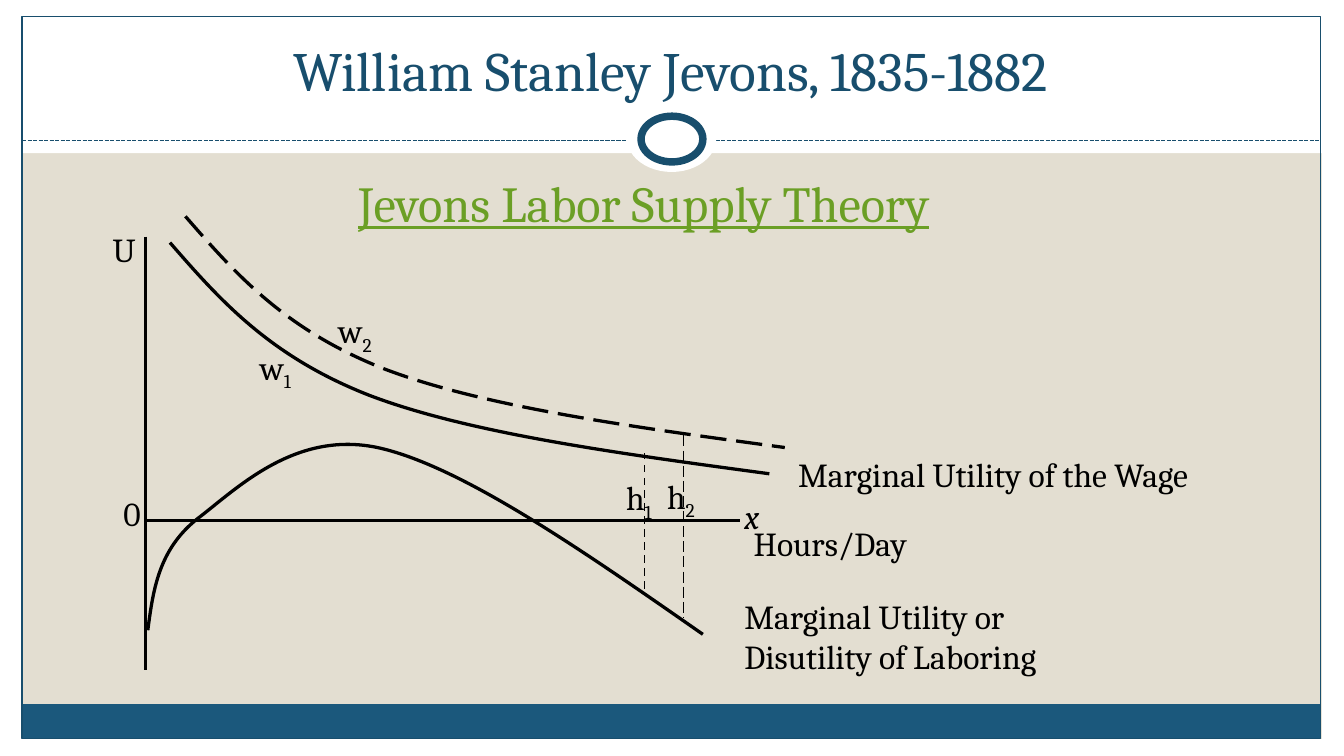
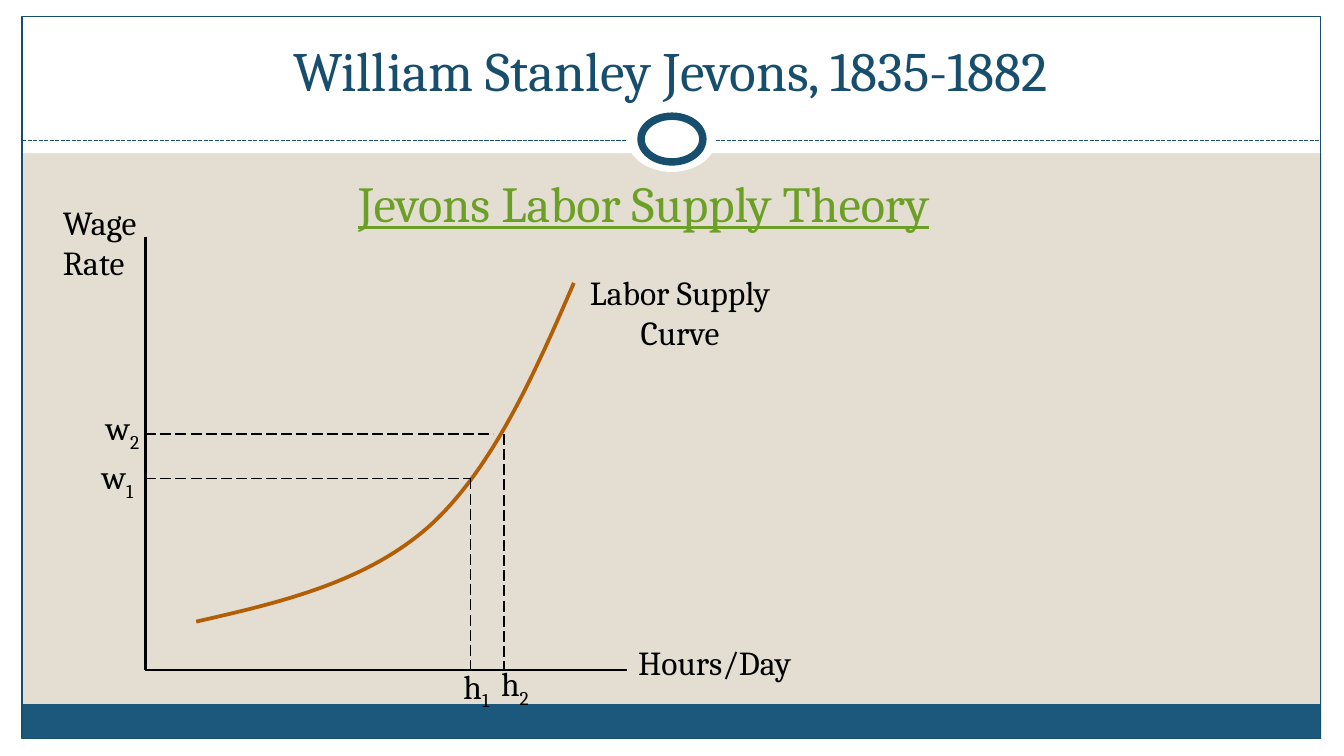
"""Build two slides on the Jevons theory of labor supply."""
from dataclasses import dataclass
from typing import Optional

import lxml.etree
import pptx
import pptx.dml.color
import pptx.enum.dml
import pptx.enum.shapes
import pptx.enum.text
import pptx.oxml.ns
import pptx.util

SCALE = 4572
W, H = 2000, 1125
FONT = "Cambria"
COLORS = {
    "sand": "E3DED1",
    "white": "FFFFFF",
    "band": "1B587C",
    "navy": "184E6D",
    "green": "6B9F25",
    "black": "000000",
    "supply": "B25E07",
}
DASH = pptx.enum.dml.MSO_LINE
KIND = pptx.enum.shapes.MSO_SHAPE
ALIGN = pptx.enum.text.PP_ALIGN
ANCHOR = pptx.enum.text.MSO_ANCHOR

AXIS_X, AXIS_TOP, AXIS_END = 216, 352, 997
H1, H2 = 700, 750
W1, W2 = 712, 646


@dataclass(frozen=True)
class Panel:
    """A preset shape of the slide frame."""
    x: int
    y: int
    w: int
    h: int
    fill: Optional[str] = "white"
    line: Optional[str] = None
    width: float = 0.75
    kind: KIND = KIND.RECTANGLE


@dataclass(frozen=True)
class Line:
    """A straight line."""
    x1: int
    y1: int
    x2: int
    y2: int
    width: float = 1.5
    dash: Optional[DASH] = None
    color: str = "black"


@dataclass(frozen=True)
class Curve:
    """A chain of cubic Bezier segments: a start, then three points each."""
    points: tuple[tuple[int, int], ...]
    width: float = 1.75
    dash: Optional[DASH] = None
    color: str = "black"


@dataclass(frozen=True)
class Label:
    """A text box, where an underscore starts a subscript."""
    text: str
    x: int
    y: int
    w: int
    h: int = 81
    size: float = 18
    color: str = "black"
    align: ALIGN = ALIGN.LEFT
    anchor: ANCHOR = ANCHOR.TOP
    wrap: bool = False
    italic: bool = False
    underline: bool = False


FRAME = (
    Panel(0, 1100, W, 25),
    Panel(0, 0, W, 228),
    Panel(0, 0, 33, H),
    Panel(1967, 0, 33, H),
    Panel(33, 1048, 1932, 51, "band"),
    Panel(33, 25, 1932, 1074, None, "navy"),
)
RULE = Line(33, 209, 1965, 209, 0.75, DASH.SQUARE_DOT, "navy")
RING = (
    Panel(933, 156, 133, 100, kind=KIND.OVAL),
    Panel(954, 173, 92, 68, "white", "navy", 4, KIND.OVAL),
)
HEADINGS = (
    Label("William Stanley Jevons, 1835-1882", 66, 38, 1866, 124, 29.7, "navy",
          ALIGN.CENTER, ANCHOR.BOTTOM, True),
    Label("Jevons Labor Supply Theory", 66, 246, 1784, 812, 27, "green",
          ALIGN.CENTER, wrap=True, underline=True),
)
UTILITY_AXIS = Line(AXIS_X, AXIS_TOP, AXIS_X, AXIS_END)

WAGE_UTILITY = ((253, 361), (327, 446), (401, 530), (549, 588),
                (698, 645), (922, 675), (1145, 705))
WAGE_SHIFT = (23, -39)
LABOR_UTILITY = ((220, 938), (228, 878), (236, 818), (294, 772), (352, 728),
                 (440, 638), (566, 667), (690, 696), (868, 820), (1046, 944))
SUPPLY = ((292, 925), (420, 896), (546, 866), (640, 782),
          (732, 698), (794, 560), (854, 421))

UTILITY_SLIDE = (
    Label("Marginal Utility or \nDisutility of Laboring", 1088, 877, 520, 143),
    Curve(LABOR_UTILITY),
    Line(AXIS_X, 775, 1101, 775),
    UTILITY_AXIS,
    Curve(WAGE_UTILITY),
    Line(959, 876, 959, 674, 1, DASH.DASH),
    Label("0", 164, 724, 72),
    Label("Hours/Day", 1102, 768, 292),
    Label("Marginal Utility of the Wage", 1168, 666, 676),
    Label("U", 148, 331, 78),
    Label("x", 1088, 728, 66, italic=True),
    Curve(tuple((x + WAGE_SHIFT[0], y + WAGE_SHIFT[1]) for x, y in WAGE_UTILITY),
          dash=DASH.LONG_DASH),
    Line(1017, 648, 1017, 920, 0.75, DASH.LONG_DASH),
    Label("w_1", 367, 506, 92),
    Label("w_2", 484, 452, 96),
    Label("h_1", 912, 700, 84),
    Label("h_2", 973, 698, 88),
)
SUPPLY_SLIDE = (
    Line(AXIS_X, AXIS_END, 933, AXIS_END),
    UTILITY_AXIS,
    Label("Hours/Day", 930, 946, 292),
    Label("Wage\nRate", 74, 290, 166, 141),
    Curve(SUPPLY, 2, color="supply"),
    Label("Labor Supply\nCurve", 842, 395, 340, 141, align=ALIGN.CENTER),
    Line(AXIS_X, W2, 734, W2, 0.75, DASH.LONG_DASH),
    Line(AXIS_X, W1, H1, W1, 0.75, DASH.LONG_DASH),
    Line(H1, W1, H1, AXIS_END, 0.75, DASH.LONG_DASH),
    Line(H2, W2, H2, AXIS_END, 0.75, DASH.LONG_DASH),
    Label("w_1", 132, 669, 92),
    Label("w_2", 138, 596, 96),
    Label("h_1", 670, 981, 84),
    Label("h_2", 726, 977, 88),
)


def px(n: int) -> pptx.util.Emu:
    """Turn px into EMU."""
    return pptx.util.Emu(n * SCALE)


def rgb(name: str) -> pptx.dml.color.RGBColor:
    """Look up a named colour."""
    return pptx.dml.color.RGBColor.from_string(COLORS[name])


def style_line(line, color: str, width: float, dash: Optional[DASH] = None) -> None:
    """Set colour, width and dash of an outline."""
    line.color.rgb = rgb(color)
    line.width = pptx.util.Pt(width)
    if dash is not None:
        line.dash_style = dash


def draw_panel(s, panel: Panel) -> None:
    """Draw a preset shape."""
    sp = s.shapes.add_shape(panel.kind, px(panel.x), px(panel.y), px(panel.w), px(panel.h))
    sp.shadow.inherit = False
    if panel.fill:
        sp.fill.solid()
        sp.fill.fore_color.rgb = rgb(panel.fill)
    else:
        sp.fill.background()
    if panel.line:
        style_line(sp.line, panel.line, panel.width)
    else:
        sp.line.fill.background()


def draw_line(s, line: Line) -> None:
    """Draw a straight connector."""
    sp = s.shapes.add_connector(pptx.enum.shapes.MSO_CONNECTOR.STRAIGHT,
                                px(line.x1), px(line.y1), px(line.x2), px(line.y2))
    style_line(sp.line, line.color, line.width, line.dash)
    lxml.etree.SubElement(sp._element.spPr, pptx.oxml.ns.qn("a:effectLst"))


def draw_curve(s, curve: Curve) -> None:
    """Draw a freeform and merge each three line segments into a Bezier."""
    start, *rest = curve.points
    builder = s.shapes.build_freeform(*start, scale=SCALE)
    builder.add_line_segments(rest, close=False)
    sp = builder.convert_to_shape()
    sp.shadow.inherit = False
    sp.fill.background()
    style_line(sp.line, curve.color, curve.width, curve.dash)
    segments = list(sp._element.iter(pptx.oxml.ns.qn("a:lnTo")))
    for i in range(0, len(segments), 3):
        bezier = lxml.etree.Element(pptx.oxml.ns.qn("a:cubicBezTo"))
        segments[i].addprevious(bezier)
        for segment in segments[i:i + 3]:
            bezier.append(segment[0])
            segment.getparent().remove(segment)


def add_run(p, text: str, label: Label, subscript: bool = False) -> None:
    """Add one run in the style of its label."""
    r = p.add_run()
    r.text = text
    r.font.name = FONT
    r.font.size = pptx.util.Pt(label.size)
    r.font.color.rgb = rgb(label.color)
    if label.italic:
        r.font.italic = True
    if label.underline:
        r.font.underline = True
    if subscript:
        r._r.get_or_add_rPr().set("baseline", "-25000")


def draw_label(s, label: Label) -> None:
    """Draw a text box."""
    sp = s.shapes.add_textbox(px(label.x), px(label.y), px(label.w), px(label.h))
    tf = sp.text_frame
    tf.word_wrap = label.wrap
    tf.vertical_anchor = label.anchor
    if not label.wrap:
        tf.auto_size = pptx.enum.text.MSO_AUTO_SIZE.SHAPE_TO_FIT_TEXT
    p = tf.paragraphs[0]
    p.alignment = label.align
    for i, text in enumerate(label.text.split("\n")):
        if i:
            p.add_line_break()
        base, _, sub = text.partition("_")
        add_run(p, base, label)
        if sub:
            add_run(p, sub, label, subscript=True)


DRAW = {Panel: draw_panel, Line: draw_line, Curve: draw_curve, Label: draw_label}


def add_slide(prs, items: tuple) -> None:
    """Add a slide with the shared frame and its own items."""
    s = prs.slides.add_slide(prs.slide_layouts[6])
    s.background.fill.solid()
    s.background.fill.fore_color.rgb = rgb("sand")
    for item in (*FRAME, RULE, *RING, *HEADINGS, *items):
        DRAW[type(item)](s, item)


def main() -> None:
    """Build and save the presentation."""
    prs = pptx.Presentation()
    prs.slide_width, prs.slide_height = px(W), px(H)
    for items in (UTILITY_SLIDE, SUPPLY_SLIDE):
        add_slide(prs, items)
    prs.save("out.pptx")


if __name__ == "__main__":
    main()
